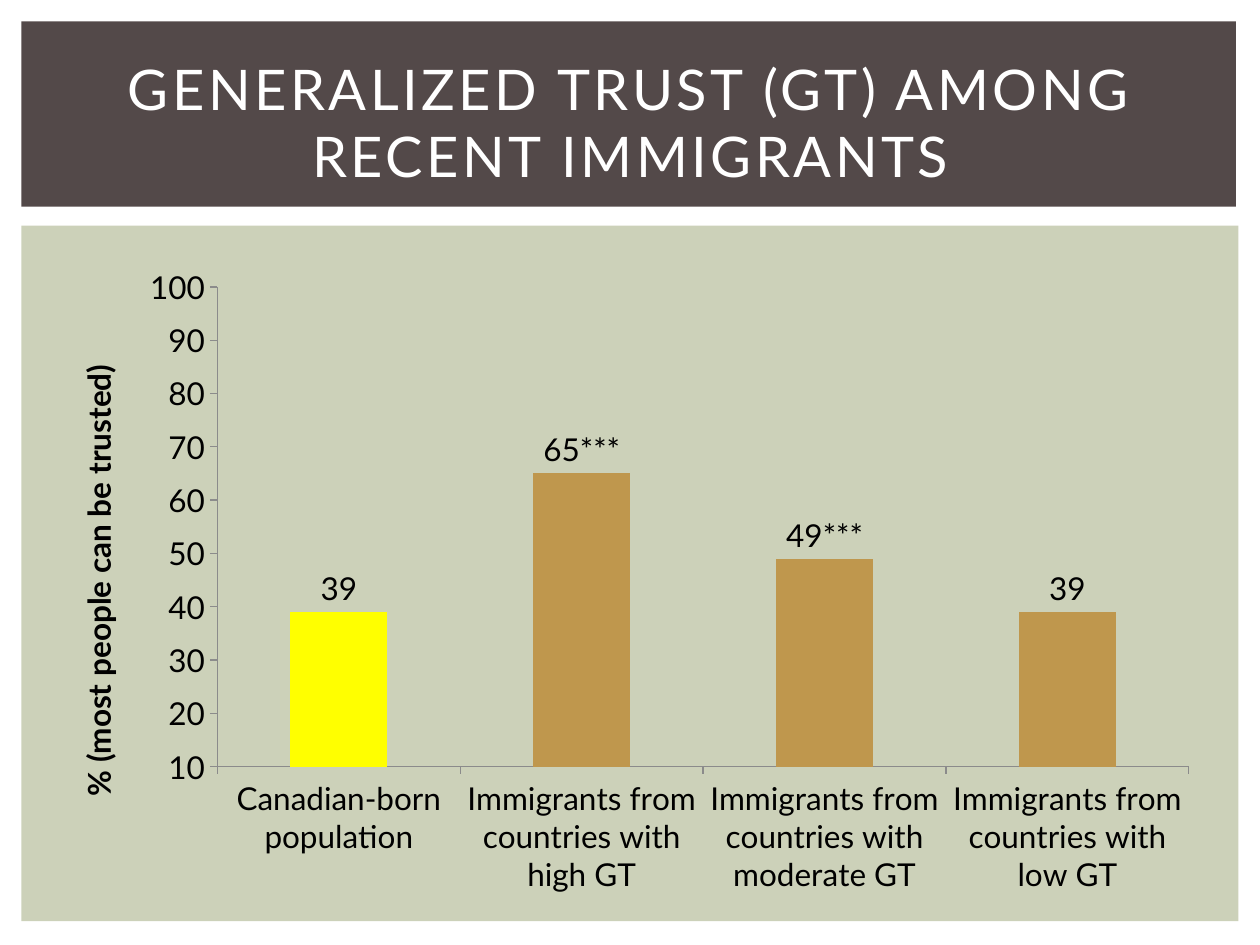
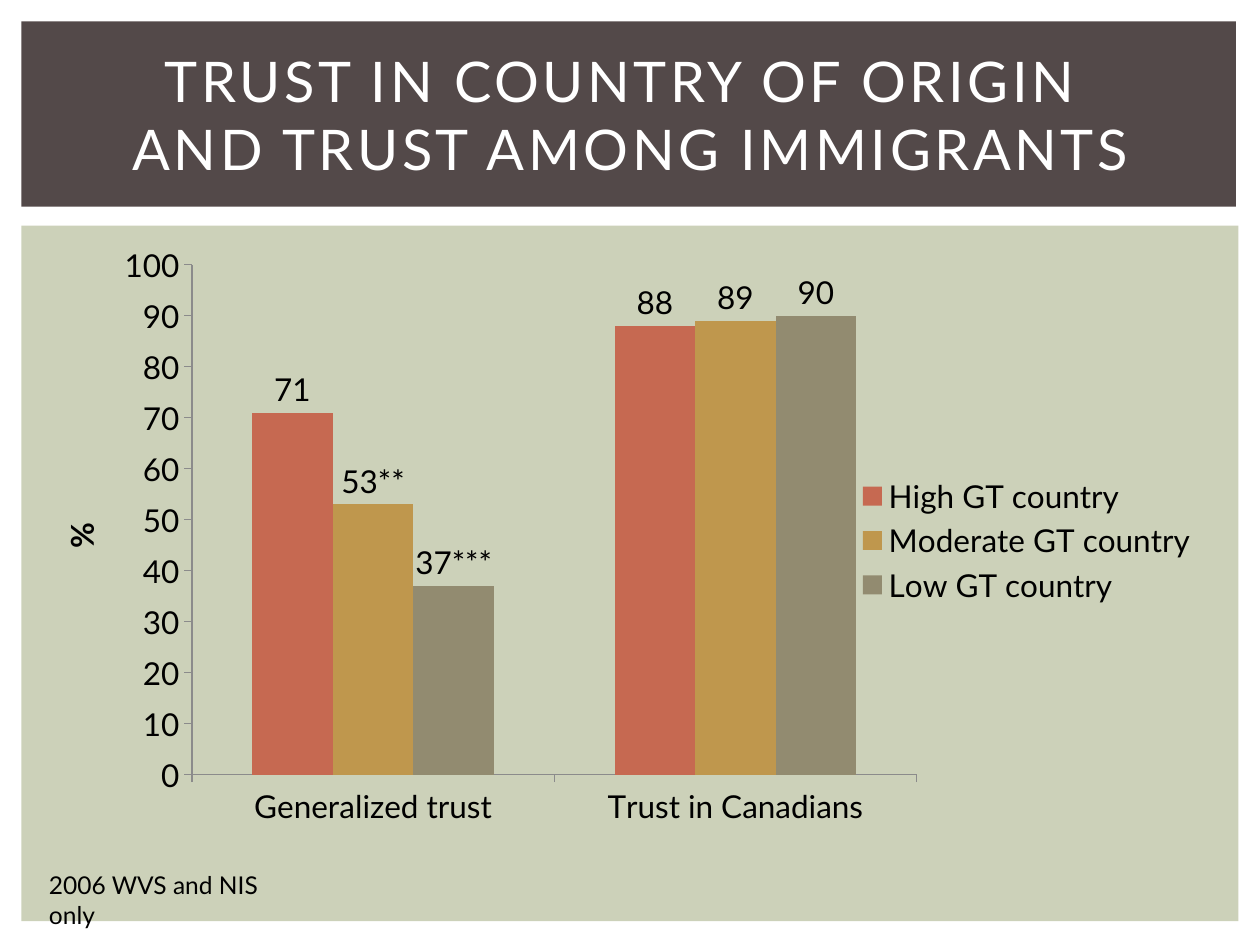
"""Build two slides with column charts on generalized trust among immigrants."""
from lxml import etree
from pptx import Presentation
from pptx.chart.data import CategoryChartData
from pptx.dml.color import RGBColor
from pptx.enum.chart import XL_CHART_TYPE, XL_LABEL_POSITION, XL_LEGEND_POSITION, XL_TICK_MARK
from pptx.enum.shapes import MSO_SHAPE
from pptx.enum.text import MSO_ANCHOR, PP_ALIGN
from pptx.oxml.ns import qn
from pptx.util import Pt

COLUMNS = XL_CHART_TYPE.COLUMN_CLUSTERED
ABOVE_BAR = XL_LABEL_POSITION.OUTSIDE_END
LEGEND_RIGHT = XL_LEGEND_POSITION.RIGHT
TICK_OUT, TICK_NONE = XL_TICK_MARK.OUTSIDE, XL_TICK_MARK.NONE
RECTANGLE = MSO_SHAPE.RECTANGLE
MIDDLE, TOP = MSO_ANCHOR.MIDDLE, MSO_ANCHOR.TOP
CENTER, LEFT = PP_ALIGN.CENTER, PP_ALIGN.LEFT

FONT = "Lato"
WHITE, BLACK, AXIS_GREY = "FFFFFF", "000000", "8B8B8B"
RED, GOLD, OLIVE, YELLOW = "C66951", "BF974D", "928B70", "FFFF00"
BANDS = [
    ("CCD1B9", (12.24, 128.88, 695.52, 397.44)),
    ("534949", (12.24, 12.24, 694.08, 105.84)),
]
CHART_LEFT, CHART_TOP, CHART_WIDTH = 30.24, 135.36, 661.68

SLIDES = [
    {
        "title": ["GENERALIZED TRUST (GT) AMONG RECENT IMMIGRANTS"],
        "title_top": 28.08,
        "chart_height": 382.32,
        "plot": (0.142, 0.075, 0.839, 0.717),
        "axis_title": "% (most people can be trusted)",
        "minimum": 10,
        "legend": False,
        "categories": [
            "Canadian-born population",
            "Immigrants from countries with high GT",
            "Immigrants from countries with moderate GT",
            "Immigrants from countries with low GT",
        ],
        "series": [
            {"name": "Series 1", "values": [39, 65, 49, 39], "color": GOLD,
             "point_colors": {0: YELLOW}, "labels": {1: "65***", 2: "49***"}},
        ],
    },
    {
        "title": ["TRUST IN COUNTRY OF ORIGIN ", "AND TRUST AMONG IMMIGRANTS"],
        "title_top": 23.76,
        "chart_height": 347.04,
        "plot": (0.12, 0.046, 0.626, 0.84),
        "axis_title": "%",
        "minimum": 0,
        "legend": True,
        "categories": ["Generalized trust", "Trust in Canadians"],
        "series": [
            {"name": "High GT country", "values": [71, 88], "color": RED},
            {"name": "Moderate GT country", "values": [53, 89], "color": GOLD,
             "labels": {0: "53**"}},
            {"name": "Low GT country", "values": [37, 90], "color": OLIVE,
             "labels": {0: "37***"}},
        ],
        "note": "2006 WVS and NIS only",
    },
]


def rgb(color):
    return RGBColor.from_string(color)


def paint(fill, color):
    fill.solid()
    fill.fore_color.rgb = rgb(color)


def style_font(font, size, color, bold=False):
    font.name, font.size, font.bold = FONT, Pt(size), bold
    font.color.rgb = rgb(color)


def add_bands(slide):
    for color, box in BANDS:
        band = slide.shapes.add_shape(RECTANGLE, *map(Pt, box))
        band.shadow.inherit = False
        paint(band.fill, color)
        band.line.fill.background()


def add_text(slide, box, lines, size, color, align=LEFT, anchor=TOP, spacing=0):
    frame = slide.shapes.add_textbox(*map(Pt, box)).text_frame
    frame.word_wrap = True
    frame.vertical_anchor = anchor
    paragraph = frame.paragraphs[0]
    paragraph.alignment = align
    for index, line in enumerate(lines):
        if index:
            paragraph.add_line_break()
        run = paragraph.add_run()
        run.text = line
        style_font(run.font, size, color)
        if spacing:
            run._r.get_or_add_rPr().set("spc", str(spacing * 100))


def place_plot(chart, fractions):
    area = chart.element.find(".//" + qn("c:plotArea"))
    for old_layout in area.findall(qn("c:layout")):
        area.remove(old_layout)
    layout = etree.Element(qn("c:layout"))
    manual = etree.SubElement(layout, qn("c:manualLayout"))
    settings = [("layoutTarget", "inner"), ("xMode", "edge"), ("yMode", "edge")]
    for name, value in settings + list(zip("xywh", fractions)):
        etree.SubElement(manual, qn("c:" + name)).set("val", str(value))
    area.insert(0, layout)


def style_axes(chart, content):
    for axis in (chart.category_axis, chart.value_axis):
        axis.has_major_gridlines = False
        axis.major_tick_mark, axis.minor_tick_mark = TICK_OUT, TICK_NONE
        axis.format.line.color.rgb = rgb(AXIS_GREY)
        axis.format.line.width = Pt(0.75)
        style_font(axis.tick_labels.font, 18, BLACK)
    axis = chart.value_axis
    axis.minimum_scale, axis.maximum_scale = content["minimum"], 100
    axis.major_unit = 10
    run = axis.axis_title.text_frame.paragraphs[0].add_run()
    run.text = content["axis_title"]
    style_font(run.font, 18, BLACK, bold=True)
    axis.axis_title.element.find(".//" + qn("a:bodyPr")).set("rot", "-5400000")


def style_series(series, content):
    series.smooth = False if hasattr(series, "smooth") else None
    paint(series.format.fill, content["color"])
    labels = series.data_labels
    labels.show_value = True
    labels.position = ABOVE_BAR
    style_font(labels.font, 18, BLACK)
    for index, color in content.get("point_colors", {}).items():
        paint(series.points[index].format.fill, color)
    for index, text in content.get("labels", {}).items():
        label = series.points[index].data_label
        run = label.text_frame.paragraphs[0].add_run()
        run.text = text
        style_font(run.font, 18, BLACK)
        label.position = ABOVE_BAR


def add_trust_chart(slide, content):
    data = CategoryChartData()
    data.categories = content["categories"]
    for series in content["series"]:
        data.add_series(series["name"], series["values"])
    box = (CHART_LEFT, CHART_TOP, CHART_WIDTH, content["chart_height"])
    chart = slide.shapes.add_chart(COLUMNS, *map(Pt, box), data).chart
    chart.has_title = False
    style_font(chart.font, 18, BLACK)
    chart.has_legend = content["legend"]
    if chart.has_legend:
        chart.legend.position = LEGEND_RIGHT
        chart.legend.include_in_layout = False
        style_font(chart.legend.font, 18, BLACK)
    plot = chart.plots[0]
    plot.gap_width, plot.overlap = 150, 0
    plot.vary_by_categories = False
    style_axes(chart, content)
    for series, series_content in zip(plot.series, content["series"]):
        style_series(series, series_content)
    place_plot(chart, content["plot"])


def main():
    presentation = Presentation()
    presentation.slide_width, presentation.slide_height = Pt(720), Pt(540)
    for content in SLIDES:
        slide = presentation.slides.add_slide(presentation.slide_layouts[6])
        paint(slide.background.fill, WHITE)
        add_bands(slide)
        add_trust_chart(slide, content)
        title_box = (CHART_LEFT, content["title_top"], 660.24, 82.8)
        add_text(slide, title_box, content["title"], 32, WHITE, CENTER, MIDDLE, spacing=2)
        if "note" in content:
            add_text(slide, (20.88, 493.92, 158, 24.48), [content["note"]], 14, BLACK)
    presentation.save("out.pptx")


if __name__ == "__main__":
    main()
